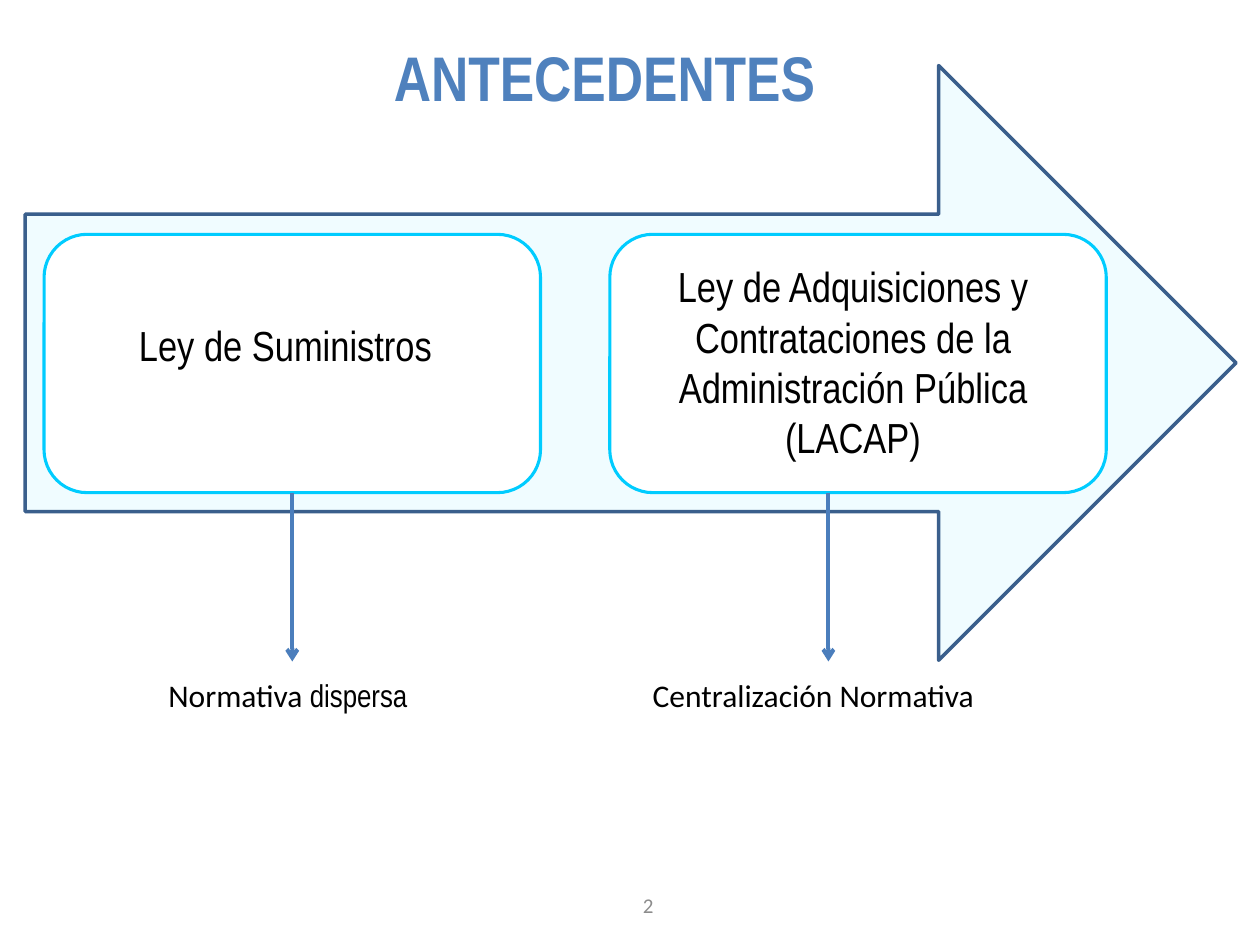
from lxml import etree
from pptx import Presentation
from pptx.dml.color import RGBColor
from pptx.enum.shapes import MSO_CONNECTOR, MSO_SHAPE
from pptx.enum.text import MSO_ANCHOR, PP_ALIGN
from pptx.oxml.ns import qn
from pptx.util import Inches, Pt

STRAIGHT = MSO_CONNECTOR.STRAIGHT
ARROW, ROUNDED = MSO_SHAPE.RIGHT_ARROW, MSO_SHAPE.ROUNDED_RECTANGLE
TOP, MIDDLE = MSO_ANCHOR.TOP, MSO_ANCHOR.MIDDLE
CENTER = PP_ALIGN.CENTER

NARROW, PLAIN = "Arial Narrow", "Calibri"
CYAN, WHITE, BLACK = "00CCFF", "FFFFFF", "000000"

TITLE = "ANTECEDENTES"
PAGE = "2"
# Each law: card left, card text and its box, result runs and left, connector x
LAWS = [
    {"left": 0.35, "text": "Ley de Suministros", "box": (0.58, 2.49, 3.37, 0.5),
     "result": [("Normativa ", PLAIN), ("dispersa", NARROW)],
     "result_left": 0.59, "arrow_x": 2.32},
    {"left": 4.84,
     "text": "Ley de Adquisiciones y Contrataciones de la "
             "Administración Pública (LACAP)",
     "box": (4.99, 2.02, 3.56, 1.72),
     "result": [("Centralización Normativa", PLAIN)],
     "result_left": 4.76, "arrow_x": 6.575},
]
CARD_TOP, CARD_W, CARD_H = 1.86, 3.94, 2.05
CARD_BOTTOM = CARD_TOP + CARD_H
ARROW_END = 5.25
RESULT_TOP, RESULT_W, RESULT_H = 5.32, 3.39, 0.4


def rgb(value):
    return RGBColor.from_string(value)


def add_panel(s, kind, box, fill, line, width):
    sp = s.shapes.add_shape(kind, *map(Inches, box))
    sp.shadow.inherit = False
    sp.fill.solid()
    sp.fill.fore_color.rgb = rgb(fill)
    sp.line.color.rgb = rgb(line)
    sp.line.width = Pt(width)
    return sp


def set_opacity(sp, percent):
    color = sp._element.spPr.find(qn("a:solidFill"))[0]
    etree.SubElement(color, qn("a:alpha"), val=str(percent * 1000))


def add_text(s, box, runs, size, color=BLACK, bold=False, anchor=TOP):
    """Add a centred box; runs are (text, font name) pairs."""
    tf = s.shapes.add_textbox(*map(Inches, box)).text_frame
    tf.word_wrap = True
    tf.vertical_anchor = anchor
    p = tf.paragraphs[0]
    p.alignment = CENTER
    for text, font in runs:
        r = p.add_run()
        r.text = text
        for name, value in {"name": font, "size": Pt(size), "bold": bold}.items():
            setattr(r.font, name, value)
        r.font.color.rgb = rgb(color)


def add_down_arrow(s, x, top, bottom):
    line = s.shapes.add_connector(STRAIGHT, *map(Inches, (x, top, x, bottom)))
    line.line.color.rgb = rgb("4B7EBC")
    line.line.width = Pt(2.25)
    etree.SubElement(line.line._get_or_add_ln(), qn("a:tailEnd"), type="arrow")
    etree.SubElement(line._element.spPr, qn("a:effectLst"))


def main():
    prs = Presentation()
    prs.slide_width, prs.slide_height = Inches(10), Inches(7.5)
    s = prs.slides.add_slide(prs.slide_layouts[6])

    timeline = add_panel(s, ARROW, (0.2, 0.52, 9.61, 4.72), CYAN, "3A5F8C", 2)
    set_opacity(timeline, 6)
    add_text(s, (3.98, 6.98, 2.33, 0.4), [(PAGE, PLAIN)], 12, "8C8C8C",
             anchor=MIDDLE)
    add_text(s, (0.43, 0.21, 8.74, 0.79), [(TITLE, NARROW)], 36, "4F81BD",
             bold=True, anchor=MIDDLE)

    for law in LAWS:
        add_panel(s, ROUNDED, (law["left"], CARD_TOP, CARD_W, CARD_H),
                  WHITE, CYAN, 1.75)
        add_text(s, law["box"], [(law["text"], NARROW)], 24)
        add_text(s, (law["result_left"], RESULT_TOP, RESULT_W, RESULT_H),
                 law["result"], 18)
        add_down_arrow(s, law["arrow_x"], CARD_BOTTOM, ARROW_END)

    prs.save("out.pptx")


if __name__ == "__main__":
    main()
